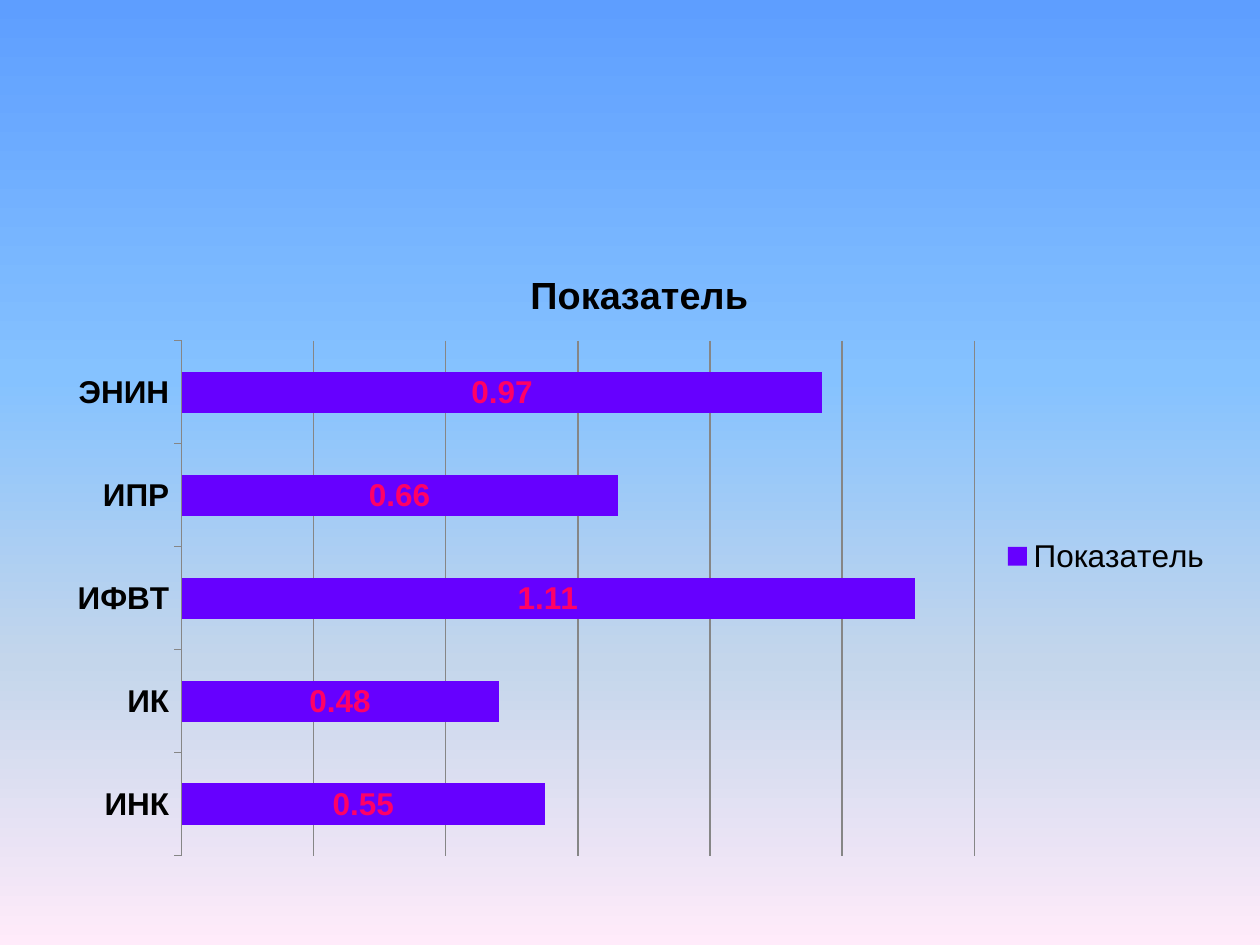
from copy import deepcopy
from dataclasses import dataclass

from pptx import Presentation
from pptx.chart.data import CategoryChartData as ChartData
from pptx.dml.color import RGBColor as RGB
from pptx.enum.chart import XL_CHART_TYPE as Kind
from pptx.enum.chart import XL_LABEL_POSITION as Spot
from pptx.enum.chart import XL_LEGEND_POSITION as Side
from pptx.enum.chart import XL_TICK_MARK as Tick
from pptx.util import Pt


@dataclass(frozen=True)
class Theme:
    face: str = "Arial"
    text: str = "000000"
    bar: str = "6600FF"
    label: str = "FF0066"
    line: str = "868686"
    title: float = 21.6
    body: float = 18
    sky: tuple = ((0, "5E9EFF"), (0.4, "85C2FF"), (0.7, "C4D6EB"), (1, "FFEBFA"))


THEME = Theme()
NAME = "Показатель"
SCORES = {"ИНК": 0.55, "ИК": 0.48, "ИФВТ": 1.11, "ИПР": 0.66, "ЭНИН": 0.97}


def style(font, size, color, bold=False):
    font.name = THEME.face
    font.size = Pt(size)
    font.bold = bold
    font.color.rgb = RGB.from_string(color)


def rule(line):
    line.width = Pt(0.75)
    line.color.rgb = RGB.from_string(THEME.line)


def paint_sky(slide):
    fill = slide.background.fill
    fill.gradient()
    fill.gradient_angle = 270
    stops = slide._element.xpath(".//a:gsLst")[0]
    while len(stops) < len(THEME.sky):
        stops.append(deepcopy(stops[0]))
    for stop, (place, color) in zip(fill.gradient_stops, THEME.sky):
        stop.position = place
        stop.color.rgb = RGB.from_string(color)


def set_axes(chart):
    cats = chart.category_axis
    cats.major_tick_mark = Tick.OUTSIDE
    style(cats.tick_labels.font, THEME.body, THEME.text, True)
    rule(cats.format.line)
    scale = chart.value_axis
    scale.visible = False
    scale.minimum_scale = 0
    scale.maximum_scale = 1.2
    scale.major_unit = 0.2
    scale.has_major_gridlines = True
    rule(scale.major_gridlines.format.line)


def set_bars(plot):
    plot.gap_width = 150
    plot.overlap = 100
    plot.vary_by_categories = False
    bars = plot.series[0]
    bars.format.fill.solid()
    bars.format.fill.fore_color.rgb = RGB.from_string(THEME.bar)
    labels = bars.data_labels
    labels.show_value = True
    labels.position = Spot.CENTER
    style(labels.font, THEME.body, THEME.label, True)


def add_scores(slide, left, top, width, height):
    data = ChartData()
    data.categories = list(SCORES)
    data.add_series(NAME, list(SCORES.values()))
    frame = slide.shapes.add_chart(
        Kind.BAR_STACKED, Pt(left), Pt(top), Pt(width), Pt(height), data
    )
    chart = frame.chart
    style(chart.font, THEME.body, THEME.text)
    chart.has_title = True
    run = chart.chart_title.text_frame.paragraphs[0].add_run()
    run.text = NAME
    style(run.font, THEME.title, THEME.text, True)
    chart.chart_title.include_in_layout = False
    chart.has_legend = True
    chart.legend.position = Side.RIGHT
    chart.legend.include_in_layout = False
    style(chart.legend.font, THEME.body, THEME.text)
    set_axes(chart)
    set_bars(chart.plots[0])


def main():
    deck = Presentation()
    deck.slide_width = Pt(720)
    deck.slide_height = Pt(540)
    slide = deck.slides.add_slide(deck.slide_layouts[6])
    paint_sky(slide)
    add_scores(slide, left=31, top=139.7, width=668.9, height=356.4)
    deck.save("out.pptx")


if __name__ == "__main__":
    main()
